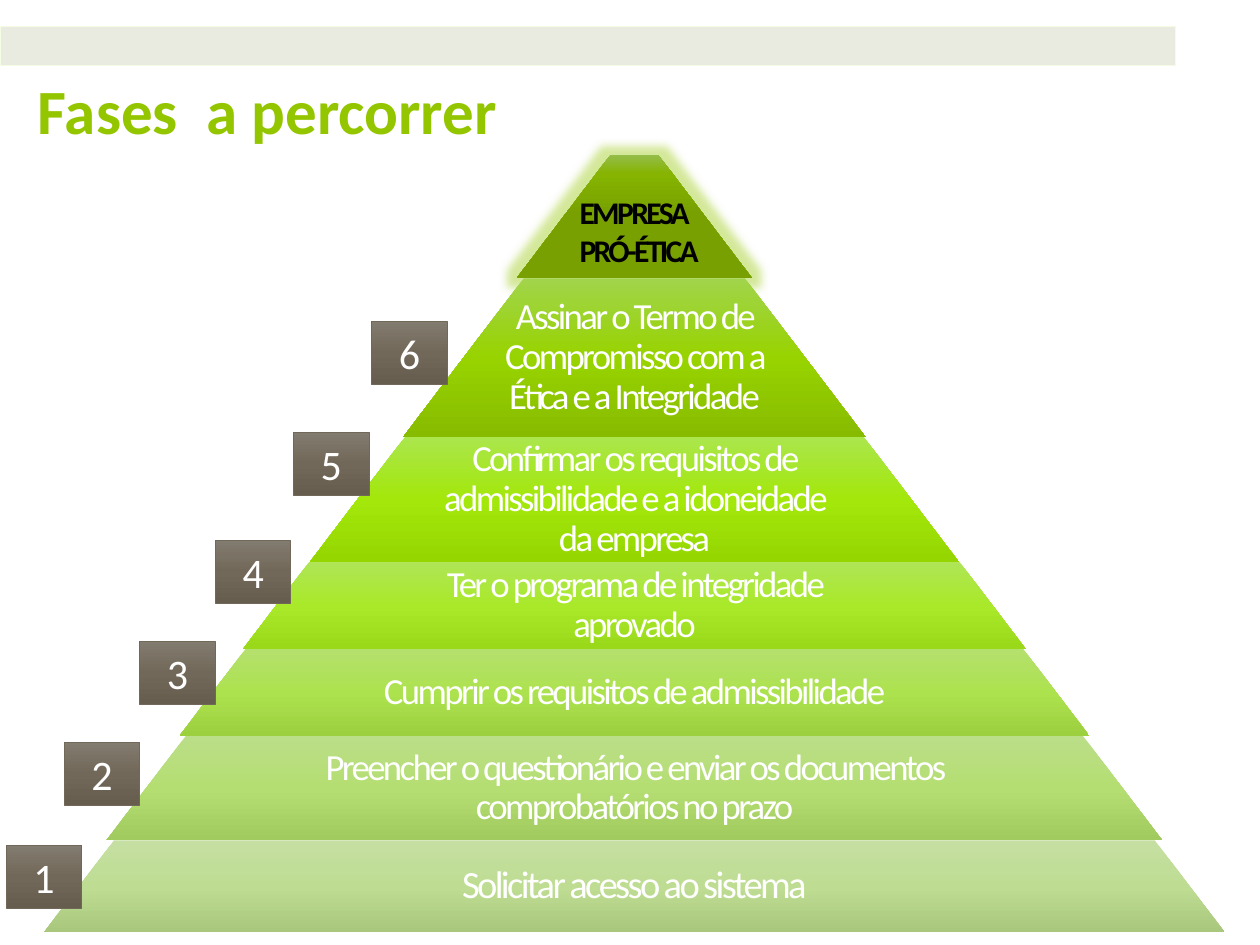
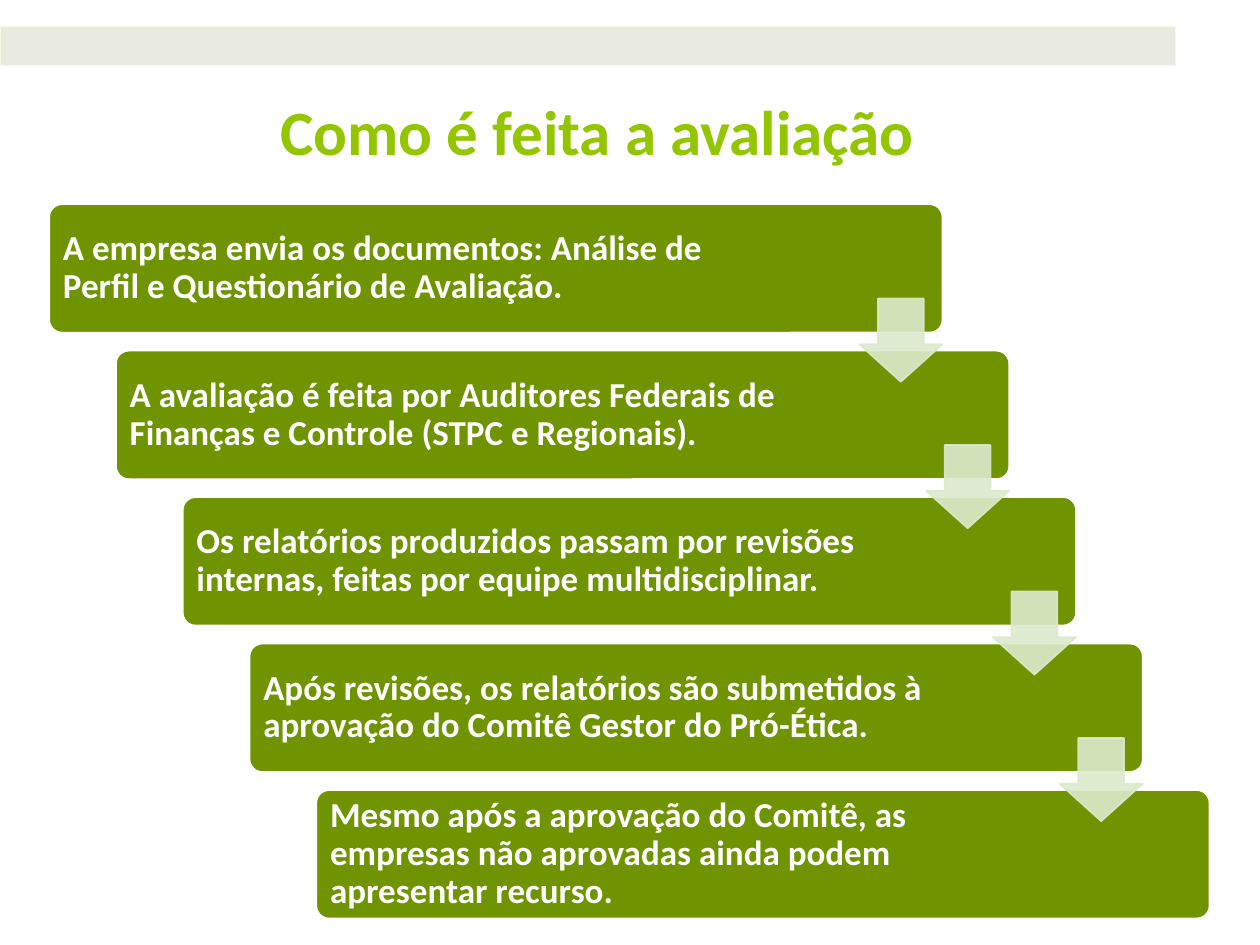
from dataclasses import dataclass
from itertools import accumulate

from lxml.etree import SubElement
from pptx import Presentation
from pptx.dml.color import RGBColor
from pptx.enum.shapes import MSO_SHAPE
from pptx.enum.text import MSO_ANCHOR, MSO_AUTO_SIZE, PP_ALIGN
from pptx.oxml.ns import qn
from pptx.util import Inches, Pt


@dataclass(frozen=True)
class Theme:
    font: str = "Calibri"
    white: str = "FFFFFF"
    black: str = "000000"
    title: str = "94C600"
    band: str = "E9EAE0"
    band_line: str = "F4FCE4"
    step: str = "6F9400"
    arrow: str = "DCEACC"
    badge_line: str = "71685A"
    badge: tuple = ((0, "827B6F"), (50, "726859"), (100, "665D4E"))
    peak: tuple = ((0, "94BD4B"), (15, "86B400"), (49, "77A000"))
    title_size: int = 36
    badge_size: int = 24
    base_size: int = 22
    tier_size: int = 21
    step_size: int = 20
    peak_size: int = 18


class Builder:
    """Holds the deck, its style and the current slide."""

    def __init__(self, theme):
        self.theme = theme
        self.deck = Presentation()
        self.deck.slide_width, self.deck.slide_height = Inches(10), Inches(7.5)
        self.layout = self.deck.slide_layouts[5]
        self.page = None

    def new_page(self, title, area, align):
        self.page = self.deck.slides.add_slide(self.layout)
        box = self.page.shapes.title
        box.left, box.top, box.width, box.height = map(Inches, area)
        self.paint(box.fill, self.theme.white)
        self.set_text(box, [title], self.theme.title_size, self.theme.title,
                      align=align, bold=True, insets=(0.1, 0.05, 0.1, 0.05))

    def share_band(self):
        """Put the top band on the layout, behind everything else."""
        band = self.shape(MSO_SHAPE.RECTANGLE, (0, 0.21, 9.33, 0.31),
                          self.theme.band, self.theme.band_line)
        self.layout.shapes.element.insert(2, band.element)

    def paint(self, fill, color):
        fill.solid()
        fill.fore_color.rgb = RGBColor.from_string(color)

    def gradient(self, shape, stops):
        shape.fill.gradient()
        shape.fill.gradient_angle = 270
        stop_list = shape.element.spPr.find(qn("a:gradFill")).find(qn("a:gsLst"))
        for stop in list(stop_list):
            stop_list.remove(stop)
        for position, color in stops:
            stop = SubElement(stop_list, qn("a:gs"), pos=str(position * 1000))
            SubElement(stop, qn("a:srgbClr"), val=color)

    def shape(self, kind, area, fill, line=None, line_width=1.0, adjust=()):
        shape = self.page.shapes.add_shape(kind, *map(Inches, area))
        shape.shadow.inherit = False
        for index, value in enumerate(adjust):
            shape.adjustments[index] = value
        if isinstance(fill, str):
            self.paint(shape.fill, fill)
        else:
            self.gradient(shape, fill)
        if line:
            self.paint(shape.line.fill, line)
            shape.line.width = Pt(line_width)
        else:
            shape.line.fill.background()
        return shape

    def fade(self, shape, percent):
        for color in list(shape.element.spPr.iter(qn("a:srgbClr"))):
            SubElement(color, qn("a:alpha"), val=str(percent * 1000))

    def glow(self, shape, color, radius, percent):
        effects = shape.element.spPr.find(qn("a:effectLst"))
        glow = SubElement(effects, qn("a:glow"), rad=str(Inches(radius)))
        tint = SubElement(glow, qn("a:srgbClr"), val=color)
        SubElement(tint, qn("a:alpha"), val=str(percent * 1000))

    def text(self, area, lines, size, color, **style):
        box = self.page.shapes.add_textbox(*map(Inches, area))
        self.set_text(box, lines, size, color, **style)

    def set_text(self, box, lines, size, color, align=PP_ALIGN.LEFT, bold=False,
                 insets=(0.03,) * 4, line_spacing=1.0, tracking=0):
        frame = box.text_frame
        left, top, right, bottom = map(Inches, insets)
        frame_format = {
            "word_wrap": True, "auto_size": MSO_AUTO_SIZE.NONE,
            "vertical_anchor": MSO_ANCHOR.MIDDLE,
            "margin_left": left, "margin_top": top,
            "margin_right": right, "margin_bottom": bottom,
        }
        for name, value in frame_format.items():
            setattr(frame, name, value)
        for index, line in enumerate(lines):
            para = frame.add_paragraph() if index else frame.paragraphs[0]
            para.alignment = align
            para.line_spacing = line_spacing
            span = para.add_run()
            span.text = line
            font_format = {"name": self.theme.font, "size": Pt(size), "bold": bold}
            for name, value in font_format.items():
                setattr(span.font, name, value)
            span.font.color.rgb = RGBColor.from_string(color)
            if tracking:
                span.font._element.set("spc", str(round(tracking * 100)))


def phases_page(builder):
    theme = builder.theme
    builder.new_page("Fases  a percorrer", (0.2, 0.6, 8.66, 0.54), PP_ALIGN.LEFT)
    builder.share_band()

    # Pyramid tiers below the peak: width, height, gradient, size, text
    center, peak_top, peak_width, peak_height = 5.035, 1.23, 1.87, 0.98
    slope = (0.76,)
    tiers = [
        (3.67, 1.26, ("A1D44B", "98D300", "87BB00"), theme.tier_size,
         "Assinar o Termo de Compromisso com a Ética e a Integridade"),
        (5.15, 0.99, ("ABE64C", "A3E70B", "95D601"), theme.tier_size,
         "Confirmar os requisitos de admissibilidade e a idoneidade da empresa"),
        (6.21, 0.69, ("AFE557", "A9E929", "99D91A"), theme.tier_size,
         "Ter o programa de integridade aprovado"),
        (7.22, 0.69, ("B4E06D", "ADE24F", "9CD03E"), theme.tier_size,
         "Cumprir os requisitos de admissibilidade"),
        (8.38, 0.83, ("BBDE88", "B4DE72", "A1CB5F"), theme.tier_size,
         "Preencher o questionário e enviar os documentos comprobatórios no prazo"),
        (9.37, 0.73, ("C5DFA2", "BEDD92", "A9C87D"), theme.base_size,
         "Solicitar acesso ao sistema"),
    ]

    # Peak with its glow
    peak_area = (center - peak_width / 2, peak_top, peak_width, peak_height)
    peak = builder.shape(MSO_SHAPE.TRAPEZOID, peak_area, theme.peak, adjust=slope)
    builder.glow(peak, theme.title, 0.14, 40)
    builder.text(peak_area, ["EMPRESA", "PRÓ-ÉTICA"], theme.peak_size, theme.black,
                 bold=True, insets=(0.5, 0.22, 0, 0), tracking=-1.5)

    # Tiers stacked downwards, with text over the middle 65 %
    tops = accumulate((tier[1] for tier in tiers), initial=peak_top + peak_height)
    for top, (width, height, colors, size, label) in zip(tops, tiers):
        builder.shape(MSO_SHAPE.TRAPEZOID, (center - width / 2, top, width, height),
                      tuple(zip((0, 50, 100), colors)), adjust=slope)
        text_width = width * 0.65
        builder.text((center - text_width / 2, top, text_width, height), [label],
                     size, theme.white, align=PP_ALIGN.CENTER,
                     line_spacing=0.9, tracking=-1.5)

    # Numbered badges climbing the left edge
    badges = [(0.05, 6.71), (0.51, 5.89), (1.11, 5.09),
              (1.71, 4.29), (2.33, 3.43), (2.95, 2.55)]
    for number, (left, top) in enumerate(badges, 1):
        badge = builder.shape(MSO_SHAPE.RECTANGLE, (left, top, 0.6, 0.5),
                              theme.badge, theme.badge_line, 0.5)
        builder.set_text(badge, [str(number)], theme.badge_size, theme.white,
                         align=PP_ALIGN.CENTER)


def evaluation_page(builder):
    theme = builder.theme
    builder.new_page("Como é feita a avaliação", (0.51, 0.6, 8.46, 0.87),
                     PP_ALIGN.CENTER)
    steps = [
        "A empresa envia os documentos: Análise de Perfil e Questionário de Avaliação.",
        "A avaliação é feita por Auditores Federais de Finanças e Controle (STPC e Regionais).",
        "Os relatórios produzidos passam por revisões internas, feitas por equipe multidisciplinar.",
        "Após revisões, os relatórios são submetidos à aprovação do Comitê Gestor do Pró-Ética.",
        "Mesmo após a aprovação do Comitê, as empresas não aprovadas ainda podem apresentar recurso.",
    ]
    first_top, last_top = 1.62, 6.27
    drop = (last_top - first_top) / (len(steps) - 1)
    corners = [(0.39 + 0.53 * index, first_top + drop * index)
               for index in range(len(steps))]

    # Staircase of steps
    for (left, top), label in zip(corners, steps):
        builder.shape(MSO_SHAPE.ROUNDED_RECTANGLE, (left, top, 7.09, 1.02),
                      theme.step, theme.white, adjust=(0.1,))
        builder.text((left + 0.03, top + 0.03, 5.84, 0.96), [label],
                     theme.step_size, theme.white, bold=True,
                     insets=(0.08,) * 4, line_spacing=0.9)

    # Arrows from each step to the next
    for left, top in corners[:-1]:
        arrow = builder.shape(MSO_SHAPE.DOWN_ARROW,
                              (left + 6.43, top + 0.75, 0.66, 0.66),
                              theme.arrow, theme.arrow, adjust=(0.55, 0.45))
        builder.fade(arrow, 90)


def main():
    builder = Builder(Theme())
    phases_page(builder)
    evaluation_page(builder)
    builder.deck.save("out.pptx")


if __name__ == "__main__":
    main()
